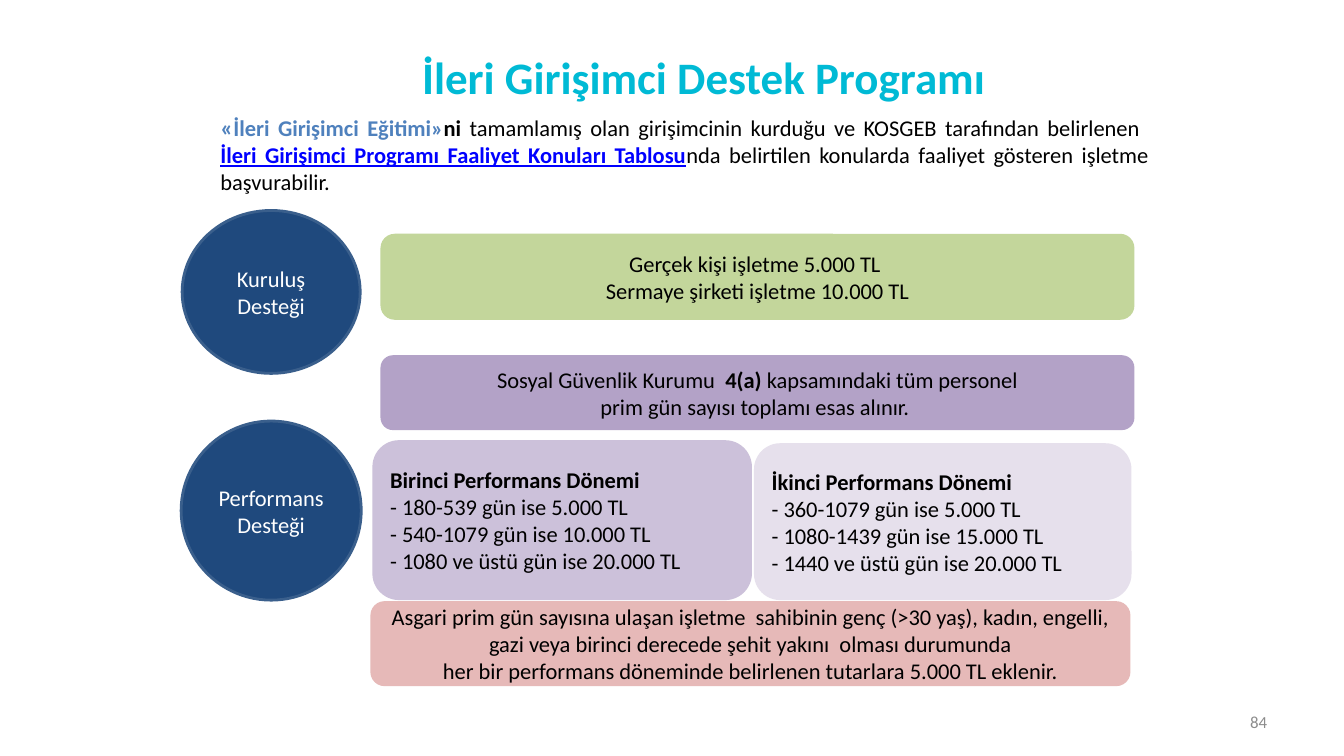
from dataclasses import dataclass

from pptx import Presentation
from pptx.dml.color import RGBColor
from pptx.enum.shapes import MSO_SHAPE
from pptx.enum.text import MSO_ANCHOR, PP_ALIGN
from pptx.util import Inches, Pt


@dataclass(frozen=True)
class Theme:
    font: str = "Calibri"
    title_size: int = 32
    quote_size: int = 17
    body_size: int = 16
    number_size: int = 12
    title: str = "00BAD5"
    training: str = "4F81BD"
    link: str = "0000FF"
    ink: str = "000000"
    light: str = "FFFFFF"
    number: str = "8C8C8C"
    circle: str = "1F497D"
    circle_edge: str = "3A5F8C"
    founding: str = "C3D69B"
    insurance: str = "B3A2C7"
    first_period: str = "CCC1DA"
    second_period: str = "E6E0EC"
    bonus: str = "E6B9B8"


THEME = Theme()
WIDTH, HEIGHT = Inches(13.28), Inches(7.47)
COLUMN, ROW = WIDTH / 100, HEIGHT / 100
BAND_LEFT, BAND_WIDTH = 28.31, 56.1


def place(left, top, width, height):
    return round(left * COLUMN), round(top * ROW), round(width * COLUMN), round(height * ROW)


def style(span, size, color, bold=False, underline=False):
    font = span.font
    font.name = THEME.font
    font.size = Pt(size)
    font.color.rgb = RGBColor.from_string(color)
    font.bold = bold
    font.underline = underline


def add_span(para, text, size, color, bold=False, underline=False):
    span = para.add_run()
    span.text = text
    style(span, size, color, bold, underline)


def write(box, lines, align, size=THEME.body_size, color=THEME.ink, bold_lines=()):
    frame = box.text_frame
    frame.word_wrap = True
    frame.vertical_anchor = MSO_ANCHOR.MIDDLE
    frame.text = "\n".join(lines)
    for index, para in enumerate(frame.paragraphs):
        para.alignment = align
        for span in para.runs:
            style(span, size, color, index in bold_lines)


def add_label(page, area, text, align, size, color, bold_lines=()):
    box = page.shapes.add_textbox(*place(*area))
    write(box, [text], align, size, color, bold_lines)


def add_panel(page, kind, area, fill, edge=None):
    panel = page.shapes.add_shape(kind, *place(*area))
    panel.shadow.inherit = False
    panel.fill.solid()
    panel.fill.fore_color.rgb = RGBColor.from_string(fill)
    if edge:
        panel.line.color.rgb = RGBColor.from_string(edge)
        panel.line.width = Pt(2)
    else:
        panel.line.fill.background()
    return panel


def add_card(page, area, fill, lines, align=PP_ALIGN.CENTER, bold_lines=()):
    card = add_panel(page, MSO_SHAPE.ROUNDED_RECTANGLE, area, fill)
    write(card, lines, align, bold_lines=bold_lines)
    return card


def add_circle(page, area, text):
    circle = add_panel(page, MSO_SHAPE.OVAL, area, THEME.circle, THEME.circle_edge)
    write(circle, [text], PP_ALIGN.CENTER, color=THEME.light)


def add_intro(page, area):
    box = page.shapes.add_textbox(*place(*area))
    box.text_frame.word_wrap = True
    para = box.text_frame.paragraphs[0]
    para.alignment = PP_ALIGN.JUSTIFY
    size = THEME.body_size
    add_span(para, "«", THEME.quote_size, THEME.training, bold=True)
    add_span(para, "İleri Girişimci Eğitimi»", size, THEME.training, bold=True)
    add_span(para, "ni ", size, THEME.ink, bold=True)
    add_span(para, "tamamlamış olan girişimcinin kurduğu ve KOSGEB tarafından belirlenen ",
             size, THEME.ink)
    para.add_line_break()
    add_span(para, "İleri Girişimci Programı Faaliyet Konuları Tablosu",
             size, THEME.link, bold=True, underline=True)
    add_span(para, "nda belirtilen konularda faaliyet gösteren işletme başvurabilir.",
             size, THEME.ink)


def add_insurance(page, area):
    card = add_card(page, area, THEME.insurance,
                    ["Sosyal Güvenlik Kurumu  ", "prim gün sayısı toplamı esas alınır. "])
    para = card.text_frame.paragraphs[0]
    add_span(para, "4(a) ", THEME.body_size, THEME.ink, bold=True)
    add_span(para, "kapsamındaki tüm personel", THEME.body_size, THEME.ink)


def main():
    deck = Presentation()
    deck.slide_width, deck.slide_height = WIDTH, HEIGHT
    page = deck.slides.add_slide(deck.slide_layouts[6])

    add_label(page, (23.95, 3.88, 56.85, 12.58), "İleri Girişimci Destek Programı",
              PP_ALIGN.CENTER, THEME.title_size, THEME.title, bold_lines=(0,))
    add_label(page, (71.69, 92.77, 23.34, 5.35), "84",
              PP_ALIGN.RIGHT, THEME.number_size, THEME.number)
    add_intro(page, (15.66, 14.19, 70.56, 12.45))

    add_card(page, (BAND_LEFT, 30.92, BAND_WIDTH, 11.38), THEME.founding,
             ["Gerçek kişi işletme 5.000 TL ", "Sermaye şirketi işletme 10.000 TL"])
    add_circle(page, (13.55, 27.84, 13.25, 21.55), "Kuruluş Desteği")

    periods = [
        ((27.71, 58.23, 28.24, 21.15), THEME.first_period,
         ["Birinci Performans Dönemi", "- 180-539 gün ise 5.000 TL",
          "- 540-1079 gün ise 10.000 TL", "- 1080 ve üstü gün ise 20.000 TL"]),
        ((56.1, 58.63, 28.09, 20.75), THEME.second_period,
         ["İkinci Performans Dönemi", "- 360-1079 gün ise 5.000 TL",
          "- 1080-1439 gün ise 15.000 TL", "- 1440 ve üstü gün ise 20.000 TL"]),
    ]
    for area, fill, lines in periods:
        add_card(page, area, fill, lines, PP_ALIGN.LEFT, bold_lines=(0,))

    add_insurance(page, (BAND_LEFT, 46.99, BAND_WIDTH, 9.91))
    add_circle(page, (13.48, 55.69, 13.4, 23.69), "Performans Desteği")
    add_card(page, (27.56, 79.52, 56.55, 11.24), THEME.bonus,
             ["Asgari prim gün sayısına ulaşan işletme  sahibinin genç (>30 yaş), kadın, "
              "engelli, gazi veya birinci derecede şehit yakını  olması durumunda",
              "her bir performans döneminde belirlenen tutarlara 5.000 TL eklenir."])

    deck.save("out.pptx")


if __name__ == "__main__":
    main()
